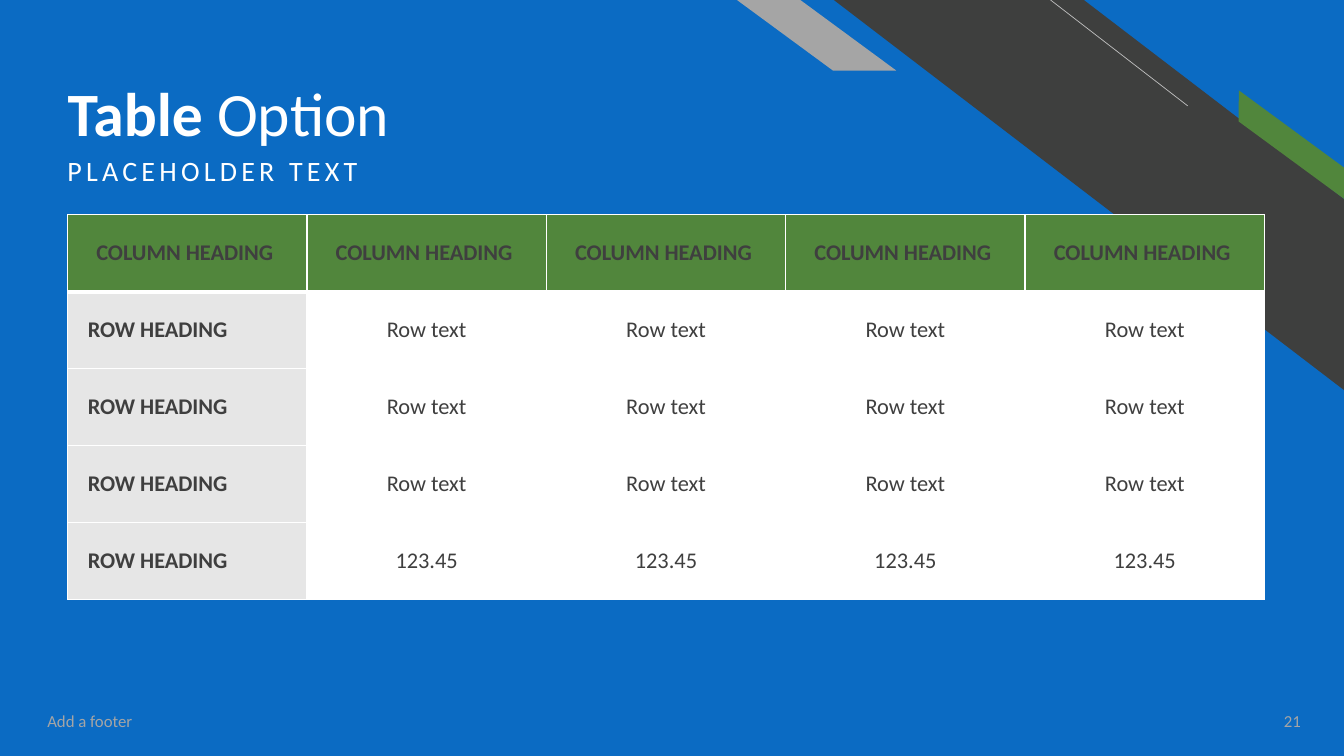
from dataclasses import dataclass

from lxml import etree
from pptx import Presentation
from pptx.dml.color import RGBColor
from pptx.enum.shapes import MSO_CONNECTOR, MSO_SHAPE
from pptx.enum.text import MSO_ANCHOR, MSO_AUTO_SIZE, PP_ALIGN
from pptx.oxml.ns import qn
from pptx.util import Inches, Pt

STRAIGHT = MSO_CONNECTOR.STRAIGHT
STRIPE, PARALLELOGRAM = MSO_SHAPE.DIAGONAL_STRIPE, MSO_SHAPE.PARALLELOGRAM
TOP, MIDDLE, BOTTOM = MSO_ANCHOR.TOP, MSO_ANCHOR.MIDDLE, MSO_ANCHOR.BOTTOM
LEFT, CENTER, RIGHT = PP_ALIGN.LEFT, PP_ALIGN.CENTER, PP_ALIGN.RIGHT
NO_AUTOFIT = MSO_AUTO_SIZE.NONE
TITLE_ONLY = 5


@dataclass(frozen=True)
class Theme:
    """Colours, font and type sizes of the deck."""
    font: str = "Calibri"
    blue: str = "0B6BC3"
    charcoal: str = "3E3F3E"
    ink: str = "3F3F3F"
    green: str = "51863C"
    gray: str = "A5A5A5"
    hairline: str = "BFBFBF"
    pale: str = "E6E6E6"
    white: str = "FFFFFF"
    title_size: int = 44
    subtitle_size: int = 20
    table_size: int = 16
    footer_size: int = 12


THEME = Theme()


def color(value):
    """Turn a hex string into a colour."""
    return RGBColor.from_string(value)


def write(frame, text, *, size, ink, bold=False, align=LEFT, leading=None, before=None, tracking=None):
    """Append a formatted span to the first paragraph of a frame."""
    para = frame.paragraphs[0]
    para.alignment = align
    if leading:
        para.line_spacing = leading
    if before:
        para.space_before = Pt(before)
    span = para.add_run()
    span.text = text
    span.font.name = THEME.font
    span.font.size = Pt(size)
    span.font.bold = bold
    span.font.color.rgb = color(ink)
    if tracking:
        span.font._element.set("spc", str(tracking * 100))


def inset(holder, anchor, left=0.1, bottom=0.05):
    """Set the anchor and margins of a cell or text frame."""
    holder.vertical_anchor = anchor
    holder.margin_left, holder.margin_right = Inches(left), Inches(0.1)
    holder.margin_top, holder.margin_bottom = Inches(0.05), Inches(bottom)


def outline(cell, ink, **widths):
    """Draw cell borders, with widths in points by side."""
    properties = cell._tc.get_or_add_tcPr()
    for side in "LRTB":
        width = widths.get(side, 1)
        line = etree.SubElement(properties, qn(f"a:ln{side}"), w=str(Pt(width)))
        fill = etree.SubElement(line, qn("a:solidFill"))
        etree.SubElement(fill, qn("a:srgbClr"), val=ink)


class Canvas:
    """Slide with a style, placing elements by percent of its size."""

    def __init__(self, deck, theme):
        """Add a title-only slide with a plain background."""
        self.deck, self.theme = deck, theme
        self.page = deck.slides.add_slide(deck.slide_layouts[TITLE_ONLY])
        self.page.background.fill.solid()
        self.page.background.fill.fore_color.rgb = color(theme.blue)

    def place(self, x, y, *size):
        """Convert percent pairs into slide lengths."""
        sides = (self.deck.slide_width, self.deck.slide_height) * 2
        return [round(side * share / 100) for side, share in zip(sides, (x, y, *size))]

    def band(self, kind, at, fill, adjust, rotation=0):
        """Add a mirrored decorative band."""
        shape = self.page.shapes.add_shape(kind, *self.place(*at))
        shape.shadow.inherit = False
        shape.adjustments[0] = adjust
        shape.rotation = rotation
        shape.fill.solid()
        shape.fill.fore_color.rgb = color(fill)
        shape.line.fill.background()
        shape.element.spPr.find(qn("a:xfrm")).set("flipH", "1")

    def line(self, start, end, ink, width):
        """Add a thin straight line."""
        line = self.page.shapes.add_connector(STRAIGHT, *self.place(*start), *self.place(*end))
        line.line.color.rgb = color(ink)
        line.line.width = Pt(width)
        etree.SubElement(line.element.spPr, qn("a:effectLst"))

    def title(self, at, strong, plain):
        """Fill the title with a bold and a regular span."""
        box = self.page.shapes.title
        box.left, box.top, box.width, box.height = self.place(*at)
        frame = box.text_frame
        frame.auto_size = NO_AUTOFIT
        inset(frame, BOTTOM, bottom=0)
        for text, bold in ((strong, True), (plain, False)):
            write(frame, text, size=self.theme.title_size, ink=self.theme.white, bold=bold, leading=0.9)

    def text(self, at, text, anchor=MIDDLE, **style):
        """Add a wrapped text box."""
        frame = self.page.shapes.add_textbox(*self.place(*at)).text_frame
        frame.word_wrap = True
        inset(frame, anchor)
        write(frame, text, **style)

    def table(self, at, rows):
        """Add a table with a heading row and a heading column."""
        theme = self.theme
        table = self.page.shapes.add_table(len(rows), len(rows[0]), *self.place(*at)).table
        table.horz_banding = False
        for row, values in enumerate(rows):
            for column, text in enumerate(values):
                cell = table.cell(row, column)
                row_heading = row > 0 and column == 0
                fill = theme.green if row == 0 else theme.pale if row_heading else theme.white
                outline(cell, theme.white, T=3 if row == 1 else 1, B=3 if row == 0 else 1)
                cell.fill.solid()
                cell.fill.fore_color.rgb = color(fill)
                inset(cell, MIDDLE, left=0.2 if row_heading else 0.1)
                write(cell.text_frame, text, size=theme.table_size, ink=theme.ink,
                      bold=row == 0 or row_heading, align=LEFT if row_heading else CENTER)


def main():
    """Build and save the table slide."""
    deck = Presentation()
    deck.slide_width, deck.slide_height = Inches(13.33), Inches(7.5)
    canvas = Canvas(deck, THEME)
    canvas.band(STRIPE, (62.04, 0, 37.96, 51.6), THEME.charcoal, 0.51)
    canvas.line((88.37, 14), (78.17, 0), THEME.hairline, 0.5)
    canvas.band(PARALLELOGRAM, (90.55, 17.47, 11.1, 3.33), THEME.green, 0.72, rotation=36.3)
    canvas.band(PARALLELOGRAM, (54.84, 0, 11.85, 9.33), THEME.gray, 1.36)
    canvas.title((4.28, 3.07, 68.34, 16.8), "Table ", "Option")
    canvas.text((4.28, 20.13, 60.47, 8.93), "PLACEHOLDER TEXT", anchor=TOP, size=THEME.subtitle_size,
                ink=THEME.white, leading=0.9, before=10, tracking=3)
    footer = {"size": THEME.footer_size, "ink": THEME.gray}
    canvas.text((2.78, 92.67, 33.76, 5.33), "Add a footer", **footer)
    canvas.text((91.45, 92.67, 6.08, 5.33), "21", align=RIGHT, **footer)
    body = [["ROW HEADING"] + [value] * 4 for value in ["Row text"] * 3 + ["123.45"]]
    canvas.table((5.03, 28.4, 89.05, 50.93), [["COLUMN HEADING "] * 5] + body)
    deck.save("out.pptx")


if __name__ == "__main__":
    main()
